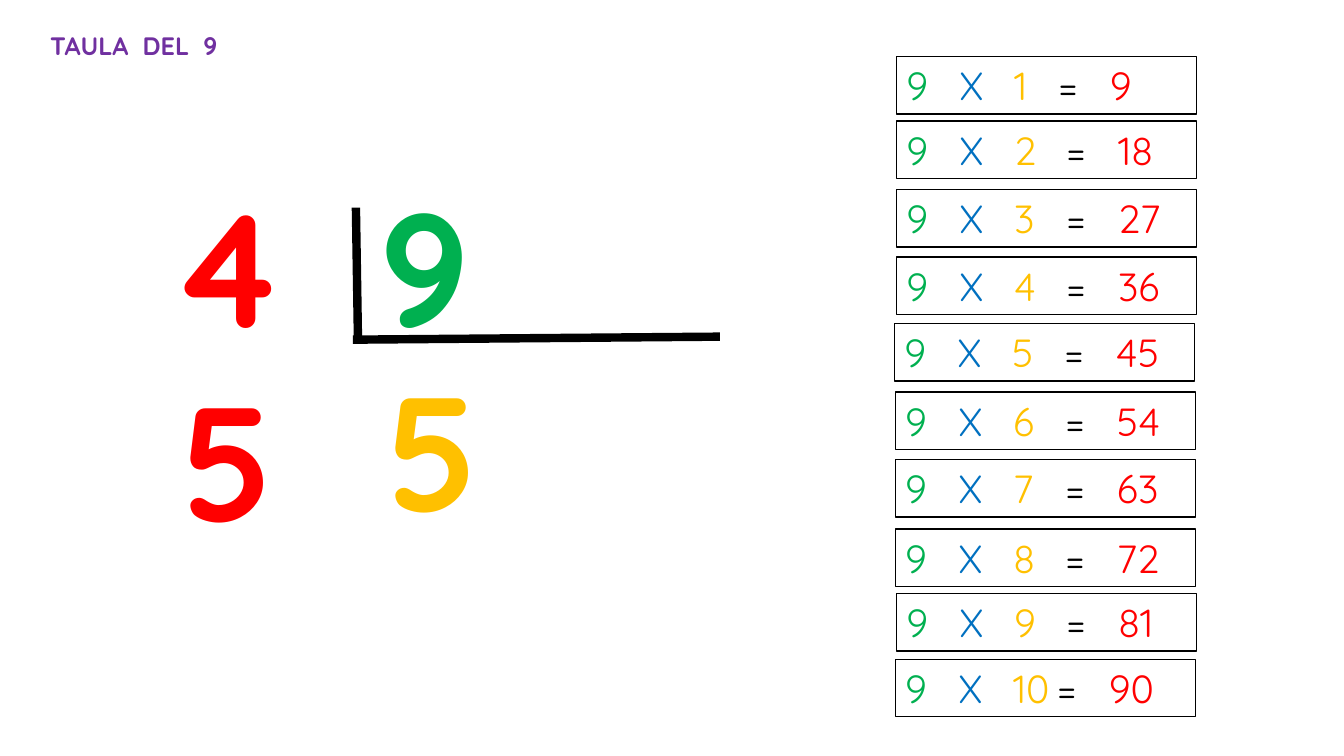
from lxml.etree import SubElement
from pptx import Presentation
from pptx.dml.color import RGBColor
from pptx.enum.shapes import MSO_CONNECTOR as Link, MSO_SHAPE as Shape
from pptx.enum.text import MSO_ANCHOR as Anchor, MSO_AUTO_SIZE as Auto, PP_ALIGN as Align
from pptx.oxml.ns import qn
from pptx.util import Inches, Pt

# Content
FONT = "Quicksand"
BLACK, WHITE, RED = "000000", "FFFFFF", "FF0000"
GREEN, BLUE, GOLD, PURPLE = "00B050", "0070C0", "FFC000", "7030A0"
BASE = 9
TITLE = ("TAULA  DEL  9", PURPLE, 18, (0.4, 0.25, 2.63, 0.4), Align.LEFT)
DIGITS = [  # text, colour, size, place, alignment
    ("9", GREEN, 115, (3.62, 1.61, 1.18, 2.04), Align.CENTER),
    ("45", RED, 115, (1.19, 1.61, 2.14, 2.04), Align.CENTER),
    ("5", GOLD, 115, (3.71, 3.43, 1.18, 2.04), Align.CENTER),
]
BARS = [(3.53, 2.06, 3.55, 3.35), (3.5, 3.37, 7.14, 3.34)]
ROWS = [  # left, top of each line of the times table
    (8.89, 0.56), (8.89, 1.2), (8.89, 1.88), (8.89, 2.55), (8.87, 3.21),
    (8.88, 3.89), (8.88, 4.56), (8.88, 5.25), (8.89, 5.89), (8.88, 6.54),
]
ROW_W, ROW_H = 2.98, 0.57
STOPS = (0.53, 1.07, 1.59, 2.1)  # X, factor, equals sign, product
SHIFT = 0.08  # the sign and product sit closer after a 1 or 10

deck = Presentation()
deck.slide_width, deck.slide_height = Inches(13.33), Inches(7.5)
slide = deck.slides.add_slide(deck.slide_layouts[6])
shapes = slide.shapes


def paint(target, code):
    target.rgb = RGBColor.from_string(code)


def add_run(para, text, color, size, bold=False):
    run = para.add_run()
    run.text = text
    run.font.name, run.font.size, run.font.bold = FONT, Pt(size), bold
    paint(run.font.color, color)


def add_text(text, color, size, place, align):
    box = shapes.add_textbox(*map(Inches, place))
    frame = box.text_frame
    frame.word_wrap, frame.auto_size = True, Auto.SHAPE_TO_FIT_TEXT
    para = frame.paragraphs[0]
    para.alignment = align
    add_run(para, text, color, size, True)


def add_bar(ends):
    bar = shapes.add_connector(Link.STRAIGHT, *map(Inches, ends))
    paint(bar.line.color, BLACK)
    bar.line.width = Pt(6)
    SubElement(bar.element.spPr, qn("a:effectLst"))


def set_tabs(para, stops):
    tabs = SubElement(para._p.get_or_add_pPr(), qn("a:tabLst"))
    for stop in stops:
        SubElement(tabs, qn("a:tab"), pos=str(Inches(stop)), algn="l")


def add_row(num, left, top):
    box = shapes.add_shape(Shape.RECTANGLE, *map(Inches, (left, top, ROW_W, ROW_H)))
    box.shadow.inherit = False
    box.fill.solid()
    paint(box.fill.fore_color, WHITE)
    paint(box.line.color, BLACK)
    box.line.width = Pt(1)
    frame = box.text_frame
    frame.word_wrap, frame.auto_size = True, Auto.SHAPE_TO_FIT_TEXT
    frame.vertical_anchor = Anchor.TOP
    para = frame.paragraphs[0]
    para.alignment = Align.LEFT
    move = SHIFT if num in (1, 10) else 0
    set_tabs(para, STOPS[:2] + tuple(stop - move for stop in STOPS[2:]))
    parts = [(f"{BASE}\t", GREEN), ("X\t", BLUE), (f"{num}", GOLD),
             ("\t=\t", BLACK), (f"{BASE * num}", RED)]
    for text, color in parts:
        add_run(para, text, color, 28)


# Division
for item in DIGITS:
    add_text(*item)
for ends in BARS:
    add_bar(ends)

# Times table
for num, (left, top) in enumerate(ROWS, 1):
    add_row(num, left, top)

# Title
add_text(*TITLE)

deck.save("out.pptx")
